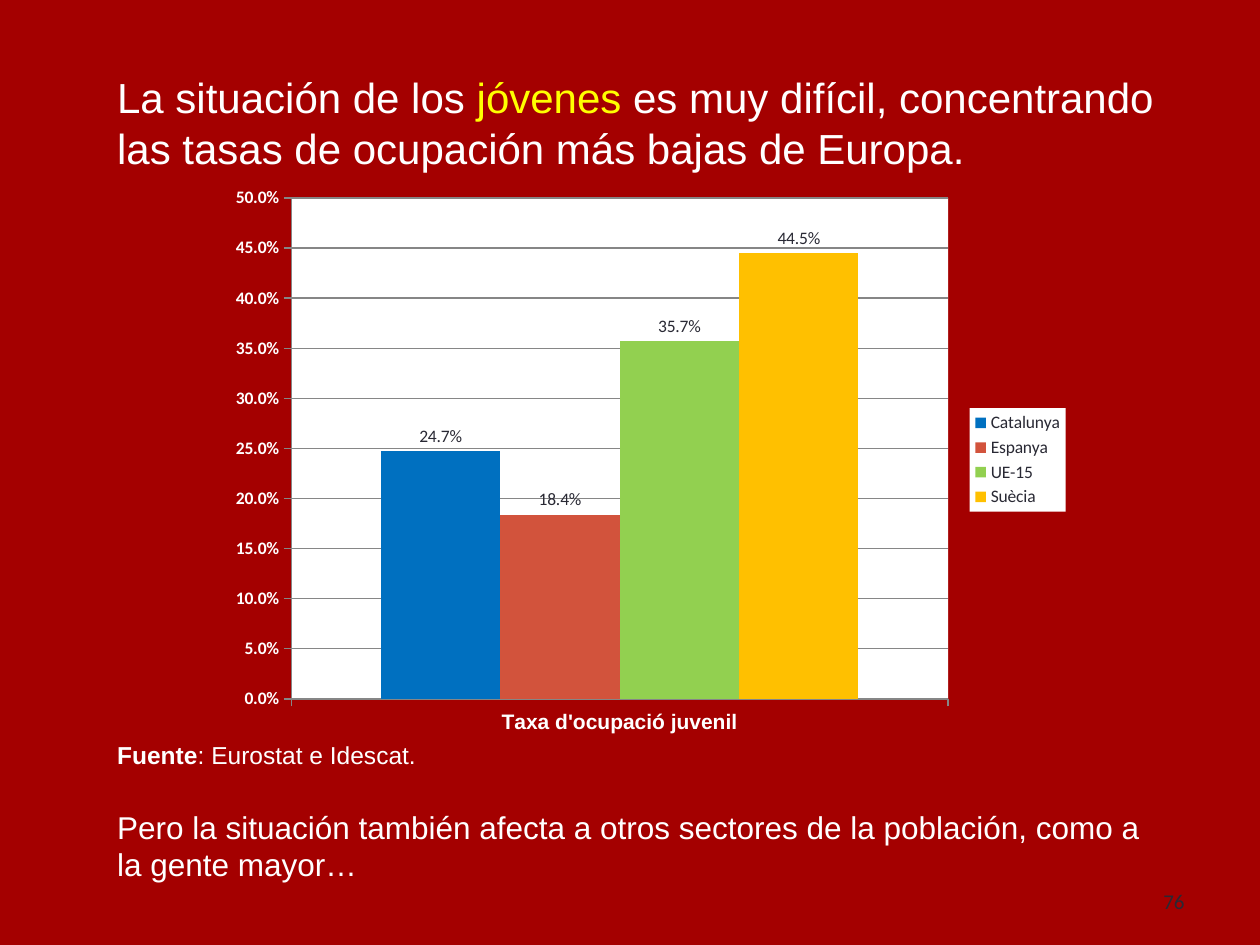
from lxml import etree
from pptx import Presentation
from pptx.chart.data import CategoryChartData
from pptx.dml.color import RGBColor
from pptx.enum.chart import XL_CHART_TYPE, XL_LABEL_POSITION, XL_LEGEND_POSITION, XL_TICK_MARK
from pptx.enum.text import MSO_ANCHOR, MSO_AUTO_SIZE, PP_ALIGN
from pptx.oxml import parse_xml
from pptx.oxml.ns import nsdecls, qn
from pptx.util import Inches, Pt

WHITE, YELLOW, DARK, GREY = "FFFFFF", "FFFF00", "292934", "868686"


def color(value):
    return RGBColor.from_string(value)


def style(font, size, value, name="Arial", bold=False):
    font.name, font.size, font.bold = name, Pt(size), bold
    font.color.rgb = color(value)


deck = Presentation()
deck.slide_width, deck.slide_height = Inches(10), Inches(7.5)
page = deck.slides.add_slide(deck.slide_layouts[1])
page.background.fill.solid()
page.background.fill.fore_color.rgb = color("A40000")

# Title and closing text share the same left edge and width
title, body = page.shapes.title, page.placeholders[1]
number = page.shapes.add_textbox(Inches(7.17), Inches(6.95), Inches(2.33), Inches(0.4))
texts = [
    (title, 0.52, 0.9, PP_ALIGN.LEFT, [
        [("La situación de los ", 24, WHITE, "Arial", False),
         ("jóvenes ", 24, YELLOW, "Arial", False),
         ("es muy difícil, concentrando las tasas de ocupación más bajas de Europa.",
          24, WHITE, "Arial", False)]]),
    (body, 5.82, 1.3, PP_ALIGN.LEFT, [
        [("Fuente", 14, WHITE, "Arial", True),
         (": Eurostat e Idescat.", 14, WHITE, "Arial", False)],
        [("Pero la situación también afecta a otros sectores de la población, "
          "como a la gente mayor…", 18, WHITE, "Arial", False)]]),
    (number, 6.95, 0.4, PP_ALIGN.RIGHT, [[("76", 12, DARK, "Calibri", False)]]),
]
for box, top, height, alignment, paragraphs in texts:
    if box is not number:
        box.left, box.top = Inches(0.83), Inches(top)
        box.width, box.height = Inches(8.5), Inches(height)
    frame = box.text_frame
    frame.word_wrap = True
    frame.auto_size = MSO_AUTO_SIZE.NONE
    frame.vertical_anchor = MSO_ANCHOR.MIDDLE if box is number else MSO_ANCHOR.TOP
    for index, spans in enumerate(paragraphs):
        para = frame.paragraphs[0] if index == 0 else frame.add_paragraph()
        para.alignment = alignment
        para.space_before = Pt(22 * index)
        for text, size, value, name, bold in spans:
            span = para.add_run()
            span.text = text
            style(span.font, size, value, name, bold)

for para in body.text_frame.paragraphs:
    properties = para._p.get_or_add_pPr()
    properties.set("marL", "0")
    properties.set("indent", "0")
    etree.SubElement(properties, qn("a:buNone"))

# Youth employment chart
rates = [
    ("Catalunya", 0.247, "0070C0"),
    ("Espanya", 0.184, "D2533C"),
    ("UE-15", 0.357, "92D050"),
    ("Suècia", 0.445, "FFC000"),
]
data = CategoryChartData(number_format="0.0%")
data.categories = ["Taxa d'ocupació juvenil"]
for name, rate, _ in rates:
    data.add_series(name, [rate])
chart = page.shapes.add_chart(
    XL_CHART_TYPE.COLUMN_CLUSTERED,
    Inches(1.77), Inches(1.39), Inches(6.77), Inches(4.52), data).chart
style(chart.font, 10, DARK, "Calibri")
chart.has_title = False

plot = chart.plots[0]
plot.gap_width, plot.overlap = 150, 0
plot.vary_by_categories = False
for series, (_, _, fill) in zip(plot.series, rates):
    series.format.fill.solid()
    series.format.fill.fore_color.rgb = color(fill)
    labels = series.data_labels
    labels.show_value = True
    labels.number_format, labels.number_format_is_linked = "0.0%", False
    labels.position = XL_LABEL_POSITION.OUTSIDE_END
    style(labels.font, 10, DARK, "Calibri")

values, categories = chart.value_axis, chart.category_axis
values.minimum_scale, values.maximum_scale, values.major_unit = 0, 0.5, 0.05
values.tick_labels.number_format = "0.0%"
values.tick_labels.number_format_is_linked = False
style(values.tick_labels.font, 10, WHITE, "Calibri", True)
style(categories.tick_labels.font, 12, WHITE, "Arial", True)
values.has_major_gridlines = True
for line in (values.format.line, categories.format.line, values.major_gridlines.format.line):
    line.color.rgb = color(GREY)
    line.width = Pt(0.75)
for axis in (values, categories):
    axis.major_tick_mark = XL_TICK_MARK.OUTSIDE

chart.has_legend = True
legend = chart.legend
legend.position = XL_LEGEND_POSITION.RIGHT
legend.include_in_layout = False
style(legend.font, 10, DARK, "Calibri")

# White panels behind the plot and the legend, and a fixed plot position
white_panel = (f'<c:spPr {nsdecls("c", "a")}><a:solidFill><a:srgbClr val="{WHITE}"/>'
               '</a:solidFill></c:spPr>')
legend._element.find(qn("c:overlay")).addnext(parse_xml(white_panel))
plot_area = chart._chartSpace.chart.plotArea
plot_area.append(parse_xml(white_panel))
for old_layout in plot_area.findall(qn("c:layout")):
    plot_area.remove(old_layout)
layout = etree.Element(qn("c:layout"))
manual = etree.SubElement(layout, qn("c:manualLayout"))
for tag, value in [("layoutTarget", "inner"), ("xMode", "edge"), ("yMode", "edge"),
                   ("x", "0.08"), ("y", "0.04"), ("w", "0.77"), ("h", "0.88")]:
    etree.SubElement(manual, qn(f"c:{tag}")).set("val", value)
plot_area.insert(0, layout)

deck.save("out.pptx")
